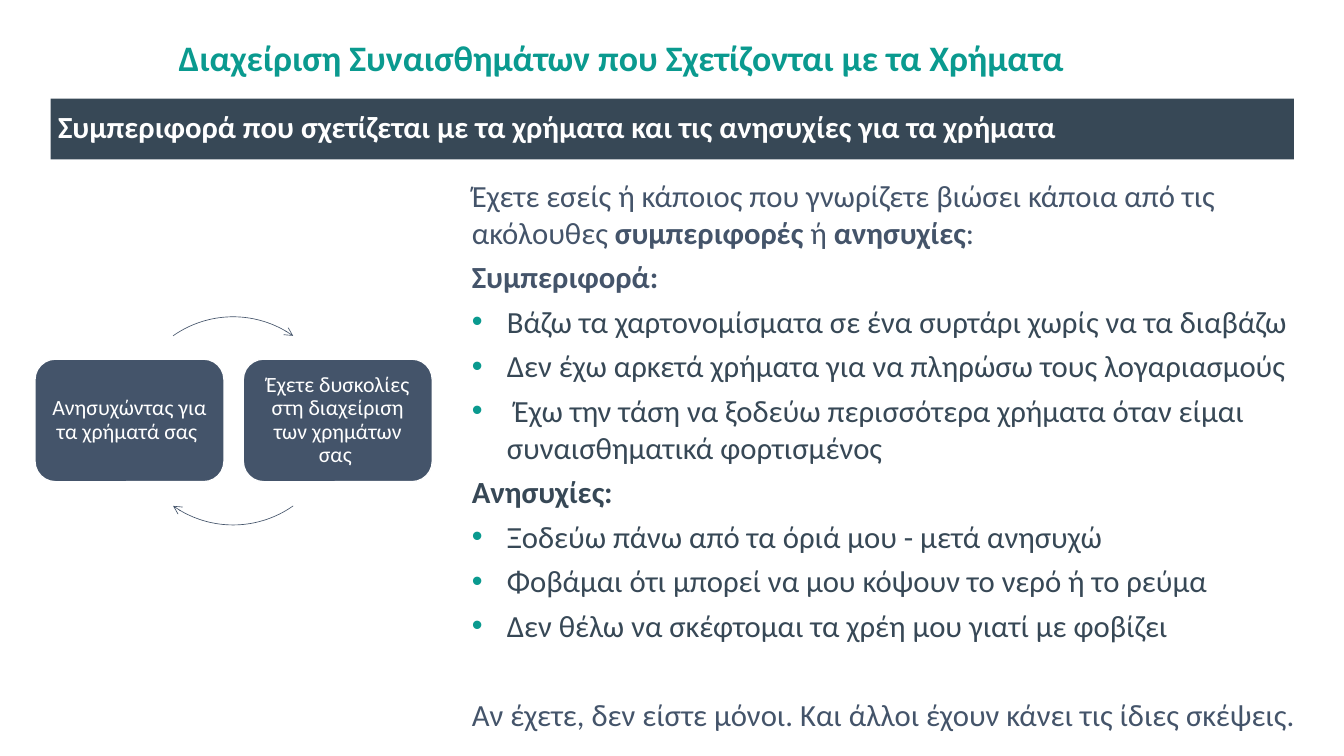
from pptx import Presentation
from pptx.dml.color import RGBColor
from pptx.enum.shapes import MSO_SHAPE as Shape
from pptx.enum.text import MSO_ANCHOR as Anchor, PP_ALIGN as Align
from pptx.oxml.ns import qn
from pptx.util import Inches, Pt
from lxml.etree import SubElement

TEAL, DARK, SLATE, WHITE = "0A9A8F", "374856", "44546A", "FFFFFF"


def color(value):
    return RGBColor.from_string(value)


def style(para, size, value, bold=False, spacing=None):
    para.line_spacing = spacing
    for span in para.runs:
        span.font.name = "Calibri"
        span.font.size = Pt(size)
        span.font.bold = bold
        span.font.color.rgb = color(value)


deck = Presentation()
deck.slide_width, deck.slide_height = Inches(1050 / 72), Inches(591 / 72)
page = deck.slides.add_slide(deck.slide_layouts[6])
shapes = page.shapes

title = shapes.add_textbox(Inches(1.86), Inches(0.26), Inches(10.86), Inches(0.79))
title.text_frame.word_wrap = True
title.text_frame.vertical_anchor = Anchor.MIDDLE
title.text_frame.margin_left = title.text_frame.margin_right = Inches(0.08)
title.text_frame.text = "Διαχείριση Συναισθημάτων που Σχετίζονται με τα Χρήματα"
style(title.text_frame.paragraphs[0], 28, TEAL, True, 0.9)

banner = shapes.add_shape(Shape.RECTANGLE, Inches(0.55), Inches(1.07), Inches(13.49), Inches(0.66))
banner.shadow.inherit = False
banner.fill.solid()
banner.fill.fore_color.rgb = color(DARK)
banner.line.fill.background()
banner.text_frame.margin_left = banner.text_frame.margin_right = Inches(0.08)
banner.text_frame.vertical_anchor = Anchor.MIDDLE
banner.text_frame.text = "Συμπεριφορά που σχετίζεται με τα χρήματα και τις ανησυχίες για τα χρήματα "
banner.text_frame.paragraphs[0].alignment = Align.JUSTIFY
style(banner.text_frame.paragraphs[0], 24, WHITE, True, 0.9)

body = shapes.add_textbox(Inches(5.04), Inches(1.87), Inches(9.16), Inches(6.27))
frame = body.text_frame
frame.word_wrap = True
frame.margin_left = frame.margin_right = Inches(0.08)

intro = frame.paragraphs[0]
intro.space_after = Pt(6)
parts = ["Έχετε εσείς ή κάποιος που γνωρίζετε βιώσει κάποια από τις ακόλουθες ",
         "συμπεριφορές", " ή ", "ανησυχίες", ":"]
for part in parts:
    intro.add_run().text = part
style(intro, 24, SLATE)
for span in intro.runs[1::2]:
    span.font.bold = True

sections = [
    ("Συμπεριφορά:", SLATE, [
        "Βάζω τα χαρτονομίσματα σε ένα συρτάρι χωρίς να τα διαβάζω",
        "Δεν έχω αρκετά χρήματα για να πληρώσω τους λογαριασμούς",
        " Έχω την τάση να ξοδεύω περισσότερα χρήματα όταν είμαι συναισθηματικά φορτισμένος"]),
    ("Ανησυχίες:", DARK, [
        "Ξοδεύω πάνω από τα όριά μου - μετά ανησυχώ",
        "Φοβάμαι ότι μπορεί να μου κόψουν το νερό ή το ρεύμα",
        "Δεν θέλω να σκέφτομαι τα χρέη μου γιατί με φοβίζει"]),
]
for heading, heading_color, items in sections:
    para = frame.add_paragraph()
    para.text = heading
    para.space_after = Pt(6)
    style(para, 24, heading_color, True)
    for item in items:
        para = frame.add_paragraph()
        para.text = item
        para.space_after = Pt(6)
        style(para, 24, DARK)
        props = para._p.get_or_add_pPr()
        props.set("marL", str(Inches(0.38)))
        props.set("indent", str(-Inches(0.38)))
        SubElement(SubElement(props, qn("a:buClr")), qn("a:srgbClr"), val=TEAL)
        SubElement(props, qn("a:buFont"), typeface="Arial")
        SubElement(props, qn("a:buChar"), char="•")

closing = frame.add_paragraph()
closing.text = "Αν έχετε, δεν είστε μόνοι. Και άλλοι έχουν κάνει τις ίδιες σκέψεις."
closing.space_before = Pt(35)
style(closing, 24, SLATE)

steps = ["Ανησυχώντας για τα χρήματά σας ", "Έχετε δυσκολίες στη διαχείριση των χρημάτων σας "]
for index, step in enumerate(steps):
    box = shapes.add_shape(Shape.ROUNDED_RECTANGLE, Inches(0.38 + 2.26 * index), Inches(3.9),
                           Inches(2.05), Inches(1.33))
    box.shadow.inherit = False
    box.fill.solid()
    box.fill.fore_color.rgb = color(SLATE)
    box.line.color.rgb = color(WHITE)
    box.line.width = Pt(1)
    label = box.text_frame
    label.margin_left = label.margin_right = label.margin_top = label.margin_bottom = Inches(0.07)
    label.vertical_anchor = Anchor.MIDDLE
    label.text = step
    label.paragraphs[0].alignment = Align.CENTER
    style(label.paragraphs[0], 17, WHITE, spacing=0.9)

for start, end in [(234.8, 305.2), (54.8, 125.2)]:
    arrow = shapes.add_shape(Shape.ARC, Inches(1.4), Inches(3.44), Inches(2.26), Inches(2.26))
    arrow.shadow.inherit = False
    arrow.fill.background()
    arrow.adjustments[0] = start * 0.6
    arrow.adjustments[1] = end * 0.6
    arrow.line.color.rgb = color(SLATE)
    arrow.line.width = Pt(0.5)
    SubElement(arrow.line._get_or_add_ln(), qn("a:tailEnd"), type="arrow")

deck.save("out.pptx")
